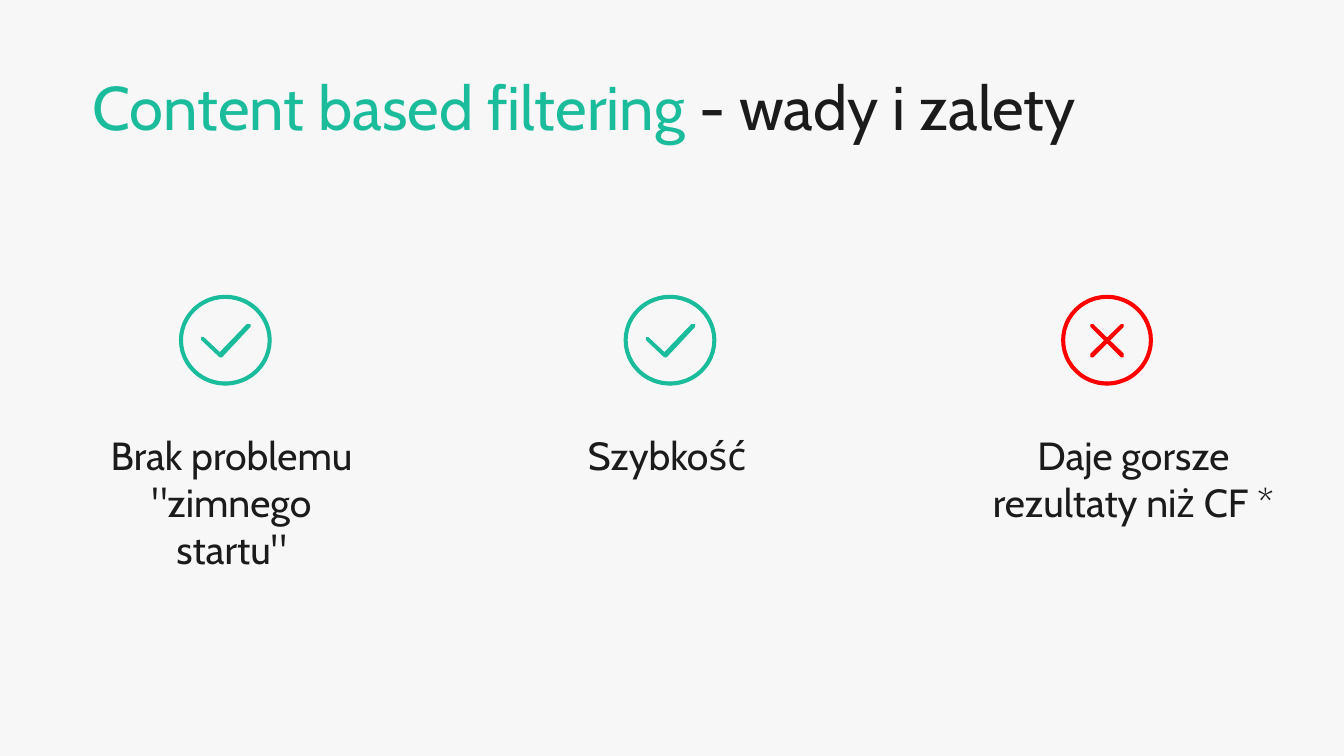
from pptx import Presentation
from pptx.dml.color import RGBColor
from pptx.enum.shapes import MSO_SHAPE
from pptx.enum.text import MSO_ANCHOR, MSO_AUTO_SIZE, PP_ALIGN
from pptx.util import Inches, Pt

GREEN = RGBColor(0x1A, 0xBC, 0x9C)
RED = RGBColor(0xFF, 0x00, 0x00)
INK = RGBColor(0x1B, 0x1B, 0x1B)
PAPER = RGBColor(0xF7, 0xF7, 0xF7)
FONT = "Cabin"

ICON_TOP = 2.93
ICON_HEIGHT = 0.89
RING_THICKNESS = 0.03
CAPTION_TOP = 4.23

# Outlines in inches from the top left corner of an icon
TICK = [(0.40, 0.61), (0.22, 0.44), (0.22, 0.42), (0.24, 0.42), (0.40, 0.57),
        (0.67, 0.29), (0.70, 0.29), (0.70, 0.31), (0.42, 0.61)]
FALLING_BAR = [(0.59, 0.61), (0.29, 0.31), (0.29, 0.29), (0.31, 0.29),
               (0.61, 0.58), (0.61, 0.61)]
RISING_BAR = [(0.90 - x, y) for x, y in FALLING_BAR]

PRO = (GREEN, 0.91, [TICK])
CON = (RED, 0.90, [FALLING_BAR, RISING_BAR])

# Caption, its left and width, its height, icon left, kind of icon
ARGUMENTS = [
    ('Brak problemu "zimnego startu"', 0.92, 2.85, 1.60, 1.78, PRO),
    ("Szybkość", 5.24, 2.85, 0.57, 6.19, PRO),
    ("Daje gorsze rezultaty niż CF *", 9.57, 3.44, 1.13, 10.53, CON),
]


class ProsAndConsSlide:
    def __init__(self, presentation):
        self.slide = presentation.slides.add_slide(presentation.slide_layouts[5])
        background = self.slide.background.fill
        background.solid()
        background.fore_color.rgb = PAPER

    def format_text(self, frame, size, alignment):
        frame.word_wrap = True
        frame.auto_size = MSO_AUTO_SIZE.SHAPE_TO_FIT_TEXT
        frame.vertical_anchor = MSO_ANCHOR.TOP
        frame.margin_left = 0
        frame.margin_right = Inches(0.1)
        frame.margin_top = frame.margin_bottom = Inches(0.05)
        paragraph = frame.paragraphs[0]
        paragraph.alignment = alignment
        paragraph.font.name = FONT
        paragraph.font.size = Pt(size)
        return paragraph

    def title(self, parts):
        heading = self.slide.shapes.title
        heading.left, heading.top = Inches(0.92), Inches(0.72)
        heading.width, heading.height = Inches(11.28), Inches(0.97)
        paragraph = self.format_text(heading.text_frame, 44, PP_ALIGN.LEFT)
        paragraph.line_spacing = 0.9
        paragraph.space_before = Pt(10)
        for text, color in parts:
            run = paragraph.add_run()
            run.text = text
            run.font.color.rgb = color

    def caption(self, text, left, width, height):
        box = self.slide.shapes.add_textbox(
            Inches(left), Inches(CAPTION_TOP), Inches(width), Inches(height))
        paragraph = self.format_text(box.text_frame, 28, PP_ALIGN.CENTER)
        paragraph.text = text
        paragraph.font.color.rgb = INK

    def paint(self, shape, color):
        shape.shadow.inherit = False
        shape.fill.solid()
        shape.fill.fore_color.rgb = color
        shape.line.color.rgb = color
        shape.line.width = Pt(0.75)

    def icon(self, left, color, width, strokes):
        """Draw a ring with the given stroke outlines inside it, as one group."""
        parts = self.slide.shapes.add_group_shape().shapes
        ring = parts.add_shape(MSO_SHAPE.DONUT, Inches(left), Inches(ICON_TOP),
                               Inches(width), Inches(ICON_HEIGHT))
        ring.adjustments[0] = RING_THICKNESS / ICON_HEIGHT
        self.paint(ring, color)
        for outline in strokes:
            points = [(Inches(left + x), Inches(ICON_TOP + y)) for x, y in outline]
            builder = parts.build_freeform(*points[0])
            builder.add_line_segments(points[1:], close=True)
            self.paint(builder.convert_to_shape(), color)


def main():
    presentation = Presentation()
    presentation.slide_width = Inches(13.33)
    presentation.slide_height = Inches(7.5)
    page = ProsAndConsSlide(presentation)
    page.title([("Content based filtering ", GREEN), ("- wady i zalety", INK)])
    for text, left, width, height, icon_left, kind in ARGUMENTS:
        page.caption(text, left, width, height)
        page.icon(icon_left, *kind)
    presentation.save("out.pptx")


if __name__ == "__main__":
    main()
